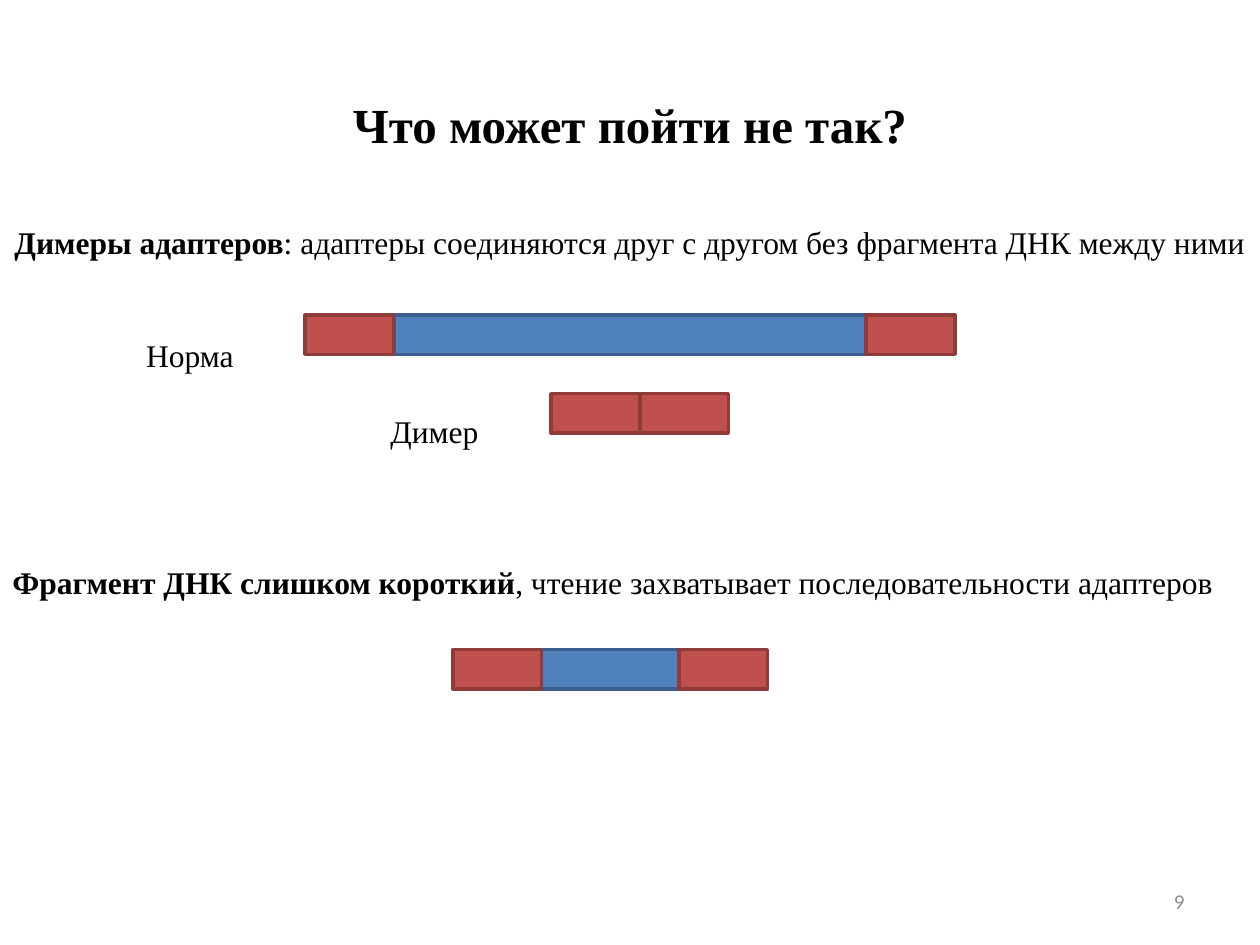
import pptx
import pptx.dml.color
import pptx.enum.shapes
import pptx.enum.text
import pptx.util

COLORS = {
    "text": "000000",
    "number": "8C8C8C",
    "dna": "4F81BD",
    "dna_line": "3A5F8C",
    "adapter": "C0504D",
    "adapter_line": "8E3B39",
}
SERIF = "Times New Roman"
COLUMNS, ROWS = 128, 96
ADAPTER_COLUMNS, STRAND_ROWS = 9, 4
ALIGN = pptx.enum.text.PP_ALIGN


def color(name):
    return pptx.dml.color.RGBColor.from_string(COLORS[name])


class SlideBuilder:
    """Places text and DNA strands on a grid of 128 columns by 96 rows."""

    def __init__(self, presentation):
        self.slide = presentation.slides.add_slide(presentation.slide_layouts[6])
        self.column = presentation.slide_width / COLUMNS
        self.row = presentation.slide_height / ROWS

    def box(self, left, top, width, height):
        return (round(left * self.column), round(top * self.row),
                round(width * self.column), round(height * self.row))

    def text(self, left, top, width, height, runs, size=18, align=ALIGN.LEFT,
             font=SERIF, fill="text", anchor=pptx.enum.text.MSO_ANCHOR.TOP):
        """Adds one paragraph; runs are pairs of wording and boldness."""
        shape = self.slide.shapes.add_textbox(*self.box(left, top, width, height))
        frame = shape.text_frame
        frame.word_wrap = True
        frame.vertical_anchor = anchor
        paragraph = frame.paragraphs[0]
        paragraph.alignment = align
        for wording, bold in runs:
            run = paragraph.add_run()
            run.text = wording
            run.font.name = font
            run.font.size = pptx.util.Pt(size)
            run.font.bold = bold
            run.font.color.rgb = color(fill)

    def segment(self, left, top, width, kind):
        shape = self.slide.shapes.add_shape(
            pptx.enum.shapes.MSO_SHAPE.RECTANGLE,
            *self.box(left, top, width, STRAND_ROWS))
        shape.shadow.inherit = False
        shape.fill.solid()
        shape.fill.fore_color.rgb = color(kind)
        shape.line.color.rgb = color(kind + "_line")
        shape.line.width = pptx.util.Pt(2)

    def strand(self, left, top, dna_columns):
        """Adds two adapters with a DNA fragment of the given length between."""
        dna_left = left + ADAPTER_COLUMNS
        if dna_columns:
            self.segment(dna_left, top, dna_columns, "dna")
        for adapter_left in (left, dna_left + dna_columns):
            self.segment(adapter_left, top, ADAPTER_COLUMNS, "adapter")


def main():
    presentation = pptx.Presentation()
    presentation.slide_width = pptx.util.Inches(10)
    presentation.slide_height = pptx.util.Inches(7.5)
    builder = SlideBuilder(presentation)

    # Title
    builder.text(0, 9, COLUMNS, 7.3, [("Что может пойти не так?", True)],
                 size=28, align=ALIGN.CENTER)

    # Adapter dimers: normal strand and dimer
    builder.text(0, 22, COLUMNS, 5, [
        ("Димеры адаптеров", True),
        (": адаптеры соединяются друг с другом без фрагмента ДНК между ними", False),
    ], align=ALIGN.CENTER)
    builder.text(13.6, 33.5, 14, 5, [("Норма", False)])
    builder.strand(31, 32, 48)
    builder.text(38.4, 41.2, 14, 5, [("Димер", False)])
    builder.strand(56, 40, 0)

    # Fragment that is too short
    builder.text(0, 56.6, COLUMNS, 5, [
        ("Фрагмент ДНК слишком короткий", True),
        (", чтение захватывает последовательности адаптеров", False),
    ])
    builder.strand(46, 66, 14)

    # Slide number
    builder.text(91.8, 89, 29.8, 5.1, [("9", False)], size=12, align=ALIGN.RIGHT,
                 font="Calibri", fill="number",
                 anchor=pptx.enum.text.MSO_ANCHOR.MIDDLE)

    presentation.save("out.pptx")


if __name__ == "__main__":
    main()
